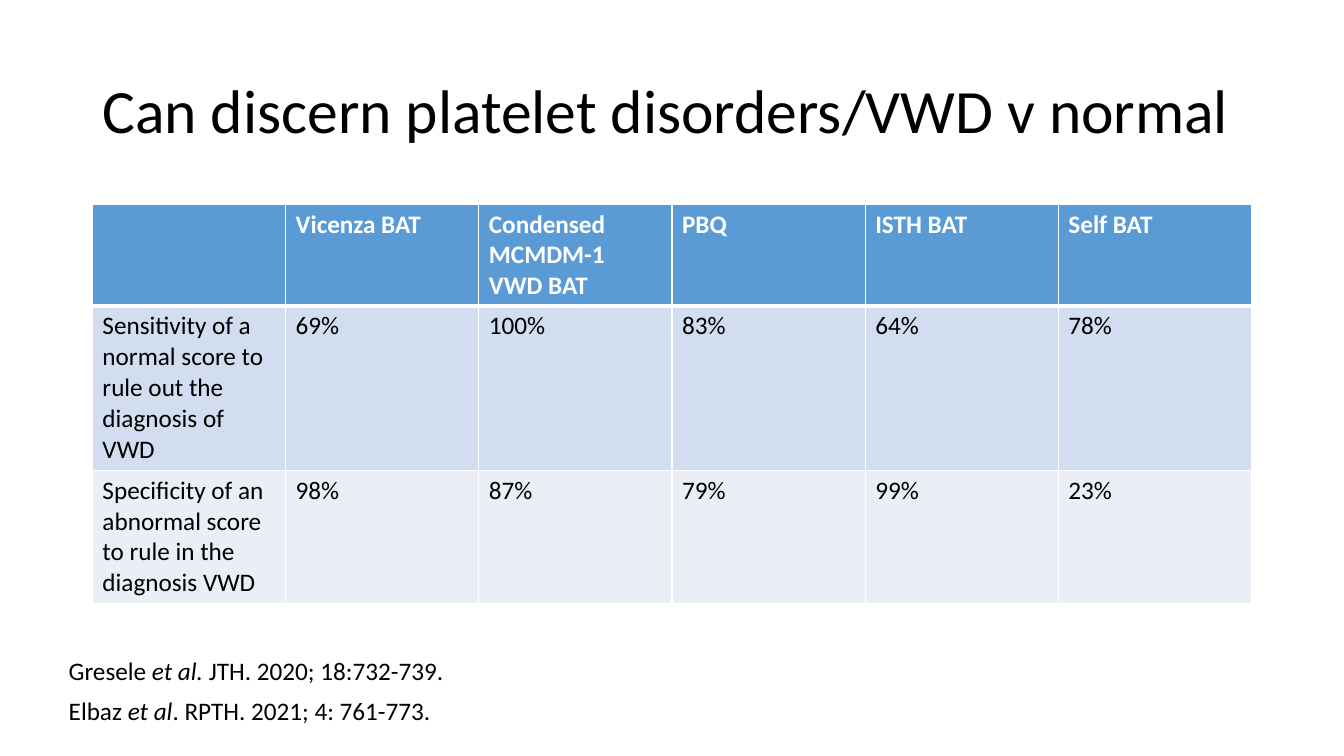
from lxml.etree import SubElement
from pptx import Presentation
from pptx.dml.color import RGBColor
from pptx.enum.text import MSO_ANCHOR as Anchor
from pptx.oxml.ns import qn
from pptx.util import Inches, Pt

SLIDE_WIDTH, SLIDE_HEIGHT = Inches(13.33), Inches(7.5)
GRID_COLUMNS, GRID_ROWS = 160, 150
FONT = "Calibri"
COLORS = {
    "text": "000000",
    "header_text": "FFFFFF",
    "border": "FFFFFF",
    "header": "5B9BD5",
    "sensitivity": "D2DEEF",
    "specificity": "EAEFF7",
}

TITLE = "Can discern platelet disorders/VWD v normal"
SCORES = [
    ("header", 20.2, ["", "Vicenza BAT", "Condensed MCMDM-1 VWD BAT", "PBQ", "ISTH BAT", "Self BAT"]),
    ("sensitivity", 32.6, ["Sensitivity of a normal score to rule out the diagnosis of VWD",
                           "69%", "100%", "83%", "64%", "78%"]),
    ("specificity", 26.4, ["Specificity of an abnormal score to rule in the diagnosis VWD",
                           "98%", "87%", "79%", "99%", "23%"]),
]
REFERENCES = [
    (129, 124, ["Gresele ", "et al. ", "JTH. 2020; 18:732-739."]),
    (137, 69, ["Elbaz ", "et al", ". RPTH. 2021; 4: 761-773."]),
]


def across(columns):
    return round(SLIDE_WIDTH * columns / GRID_COLUMNS)


def down(rows):
    return round(SLIDE_HEIGHT * rows / GRID_ROWS)


def style_font(font, size, color="text", bold=False, italic=False):
    font.name = FONT
    font.size = Pt(size)
    font.bold = bold
    font.italic = italic
    font.color.rgb = RGBColor.from_string(COLORS[color])


def add_text(slide, left, top, width, height, parts, size, anchor=Anchor.TOP, line_spacing=1.0):
    box = slide.shapes.add_textbox(across(left), down(top), across(width), down(height))
    frame = box.text_frame
    frame.word_wrap = True
    frame.vertical_anchor = anchor
    paragraph = frame.paragraphs[0]
    paragraph.line_spacing = line_spacing
    for index, part in enumerate(parts):
        run = paragraph.add_run()
        run.text = part
        style_font(run.font, size, italic=index == 1)


def add_border(cell, side, width):
    properties = cell._tc.get_or_add_tcPr()
    line = SubElement(properties, qn(f"a:ln{side}"), w=str(Pt(width)))
    fill = SubElement(line, qn("a:solidFill"))
    SubElement(fill, qn("a:srgbClr"), val=COLORS["border"])


def style_cell(cell, text, row_name, row_index):
    is_header = row_name == "header"
    widths = {"L": 1, "R": 1, "T": 3 if row_index == 1 else 1, "B": 3 if is_header else 1}
    for side, width in widths.items():
        add_border(cell, side, width)
    cell.fill.solid()
    cell.fill.fore_color.rgb = RGBColor.from_string(COLORS[row_name])
    cell.text_frame.text = text
    paragraph = cell.text_frame.paragraphs[0]
    style_font(paragraph.font, 18, "header_text" if is_header else "text", bold=is_header)
    for run in paragraph.runs:
        style_font(run.font, 18, "header_text" if is_header else "text", bold=is_header)


def add_score_table(slide, left, top, column_width):
    column_count = len(SCORES[0][2])
    total_height = sum(height for _, height, _ in SCORES)
    table = slide.shapes.add_table(
        len(SCORES), column_count, across(left), down(top),
        across(column_width * column_count), down(total_height)).table
    for column in table.columns:
        column.width = across(column_width)
    for row_index, (row_name, height, texts) in enumerate(SCORES):
        table.rows[row_index].height = down(height)
        for column_index, text in enumerate(texts):
            style_cell(table.cell(row_index, column_index), text, row_name, row_index)


def main():
    presentation = Presentation()
    presentation.slide_width = SLIDE_WIDTH
    presentation.slide_height = SLIDE_HEIGHT
    slide = presentation.slides.add_slide(presentation.slide_layouts[6])
    add_text(slide, 11, 8, 138, 29, [TITLE], 44, Anchor.MIDDLE, 0.9)
    add_score_table(slide, 11, 40.5, 23)
    for top, width, parts in REFERENCES:
        add_text(slide, 7, top, width, 8, parts, 18)
    presentation.save("out.pptx")


if __name__ == "__main__":
    main()
